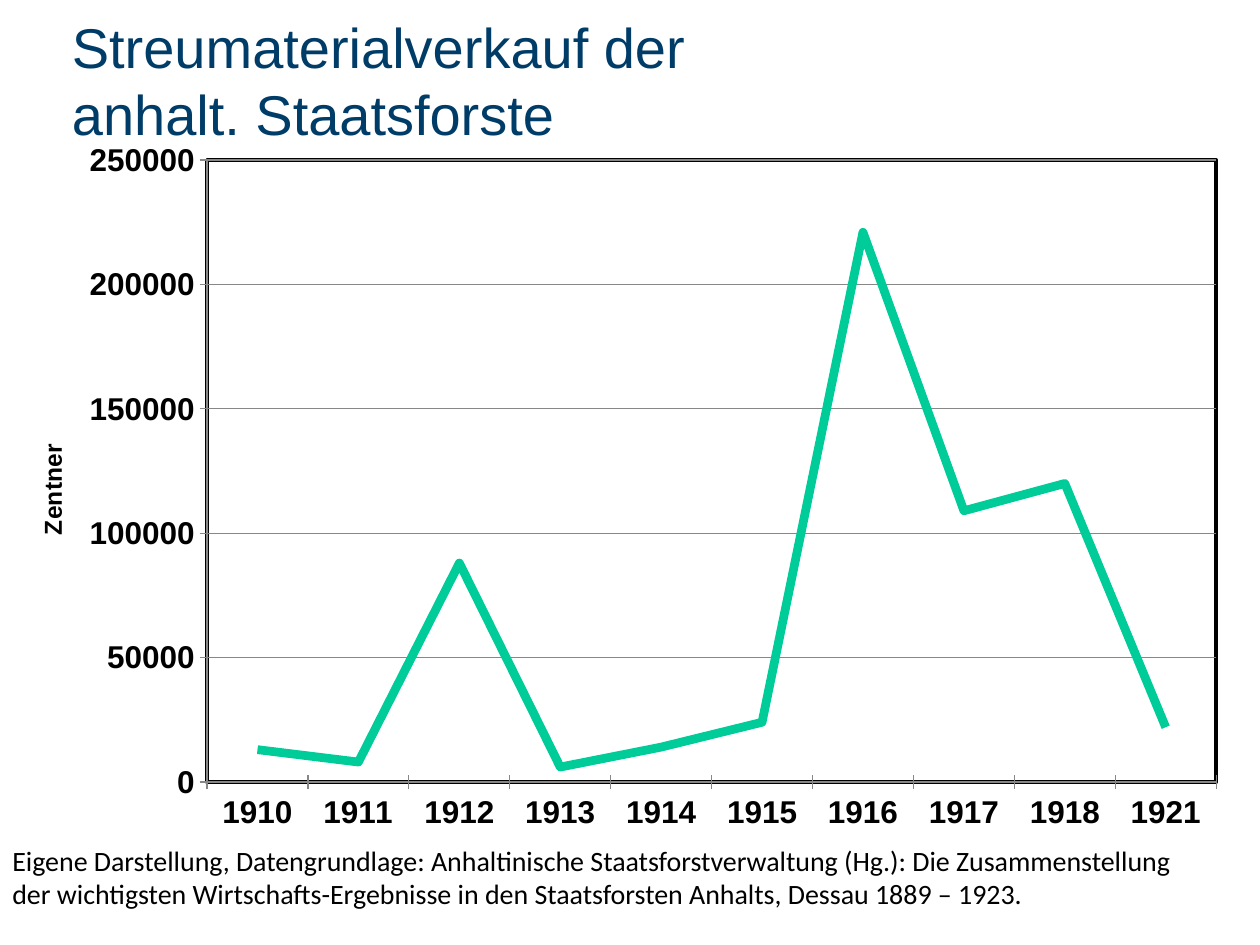
from lxml import etree
from pptx import Presentation
from pptx.chart.data import CategoryChartData
from pptx.dml.color import RGBColor
from pptx.enum.chart import XL_CHART_TYPE, XL_TICK_MARK
from pptx.enum.text import MSO_ANCHOR, PP_ALIGN
from pptx.oxml import parse_xml
from pptx.oxml.ns import nsdecls, qn
from pptx.util import Pt

NAVY = RGBColor(0x00, 0x3C, 0x68)
BLACK = RGBColor(0, 0, 0)
GREEN = RGBColor(0x00, 0xCC, 0x99)
GREY = RGBColor(0x87, 0x87, 0x87)

# Content
TITLE = ["Streumaterialverkauf der anhalt. Staatsforste"]
SOURCE = [
    "Eigene Darstellung, Datengrundlage: Anhaltinische Staatsforstverwaltung (Hg.): "
    "Die Zusammenstellung",
    "der wichtigsten Wirtschafts-Ergebnisse in den Staatsforsten Anhalts, "
    "Dessau 1889 – 1923.",
]
UNIT = "Zentner"
SALES = {
    "1910": 13000, "1911": 8000, "1912": 88000, "1913": 6000, "1914": 14000,
    "1915": 24000, "1916": 221000, "1917": 109000, "1918": 120000, "1921": 22000,
}


def add_text(slide, box, lines, face, size, color, align, anchor):
    frame = slide.shapes.add_textbox(*map(Pt, box)).text_frame
    frame.word_wrap = True
    frame.vertical_anchor = anchor
    for i, line in enumerate(lines):
        para = frame.paragraphs[0] if i == 0 else frame.add_paragraph()
        para.text = line
        para.alignment = align
        para.font.name = face
        para.font.size = Pt(size)
        para.font.color.rgb = color
    return frame


def set_layout(node, index, **parts):
    """Give a chart element a manual layout, as fractions of the chart."""
    for old in node.findall(qn("c:layout")):
        node.remove(old)
    layout = etree.Element(qn("c:layout"))
    manual = etree.SubElement(layout, qn("c:manualLayout"))
    for tag, val in parts.items():
        etree.SubElement(manual, qn("c:" + tag)).set("val", str(val))
    node.insert(index, layout)


deck = Presentation()
deck.slide_width, deck.slide_height = Pt(720), Pt(540)
slide = deck.slides.add_slide(deck.slide_layouts[6])

# Title
head = add_text(slide, (34, 0, 394, 72), TITLE, "Arial", 32, NAVY,
                PP_ALIGN.LEFT, MSO_ANCHOR.TOP)
head.margin_top = Pt(7)

# Line chart
data = CategoryChartData()
data.categories = list(SALES)
data.add_series("Series 1", list(SALES.values()))
chart = slide.shapes.add_chart(XL_CHART_TYPE.LINE, Pt(0), Pt(73.5), Pt(708.5),
                               Pt(409), data).chart
chart.has_legend = False
chart.has_title = False
chart.font.name = "Arial"
chart.font.size = Pt(10)
chart.font.color.rgb = BLACK

line = chart.plots[0].series[0]
line.smooth = False
line.format.line.color.rgb = GREEN
line.format.line.width = Pt(5)

# Axes
years, tons = chart.category_axis, chart.value_axis
for axis in (years, tons):
    axis.major_tick_mark = XL_TICK_MARK.CROSS
    axis.format.line.color.rgb = GREY
    font = axis.tick_labels.font
    font.size, font.bold, font.name = Pt(18), True, "Arial"
    font.color.rgb = BLACK
tons.minimum_scale, tons.maximum_scale, tons.major_unit = 0, 250000, 50000
tons.has_major_gridlines = True
tons.major_gridlines.format.line.color.rgb = GREY

label = tons.axis_title.text_frame
label.text = UNIT
font = label.paragraphs[0].font
font.size, font.bold, font.name = Pt(14), True, "Arial"
font.color.rgb = BLACK
name = tons.axis_title._element
name.find(".//" + qn("a:bodyPr")).set("rot", "-5400000")
set_layout(name, 1, xMode="edge", yMode="edge", x=0.026, y=0.434)

# Framed plot area
plot = chart._chartSpace.chart.plotArea
set_layout(plot, 0, layoutTarget="inner", xMode="edge", yMode="edge",
           x=0.167, y=0.044, w=0.814, h=0.869)
plot.append(parse_xml(
    f'<c:spPr {nsdecls("c", "a")}>'
    '<a:solidFill><a:srgbClr val="FFFFFF"/></a:solidFill>'
    '<a:ln w="28575"><a:solidFill><a:srgbClr val="000000"/></a:solidFill></a:ln>'
    '</c:spPr>'))

# Source note
add_text(slide, (0, 478, 695, 46), SOURCE, "Calibri", 16, BLACK,
         PP_ALIGN.JUSTIFY, MSO_ANCHOR.MIDDLE)

deck.save("out.pptx")
